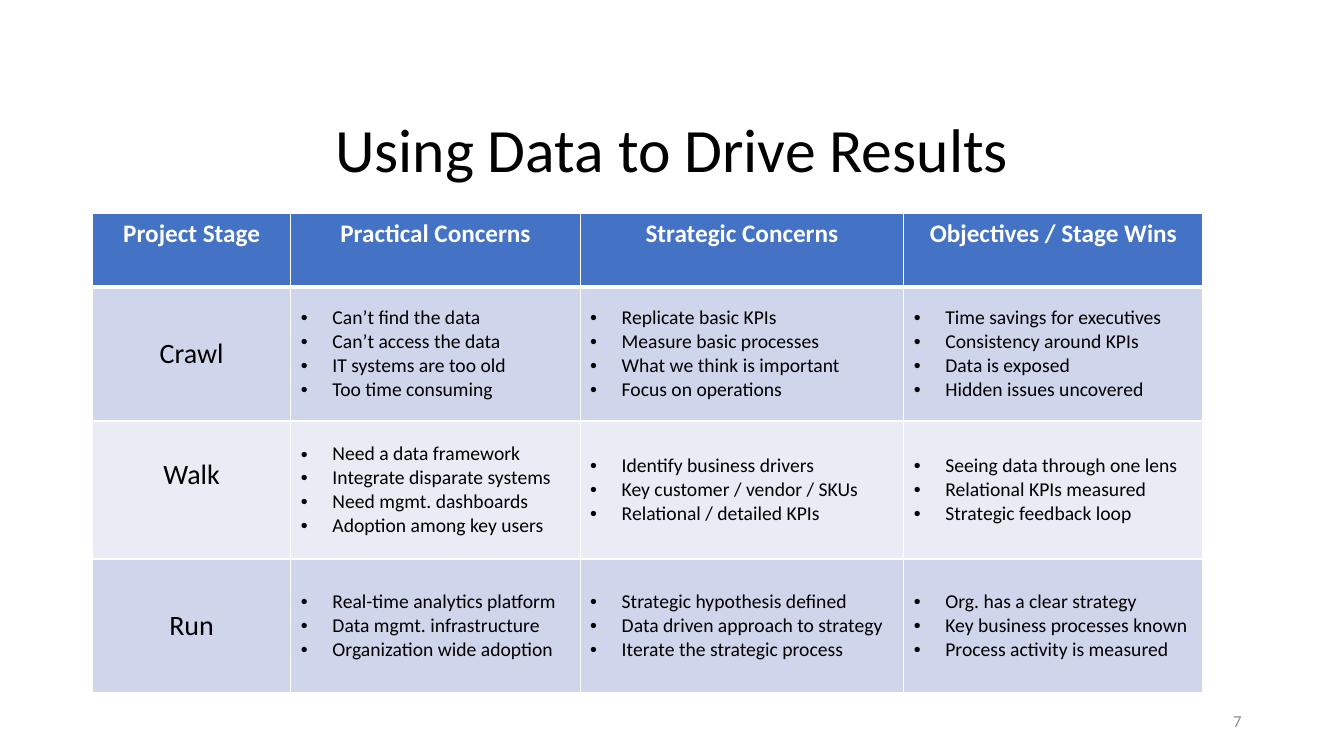
from dataclasses import dataclass

from lxml.etree import SubElement
from pptx import Presentation
from pptx.dml.color import RGBColor as Rgb
from pptx.enum.text import MSO_ANCHOR as Anchor, PP_ALIGN as Align
from pptx.oxml.ns import qn
from pptx.util import Pt


@dataclass(frozen=True)
class Theme:
    """Hold the font, colours and type sizes of the slide."""
    font: str = "Calibri"
    ink: str = "000000"
    white: str = "FFFFFF"
    gray: str = "8C8C8C"
    head: str = "4472C4"
    bands: tuple = ("CFD5EA", "E9EBF5")
    title: int = 44
    stage: int = 20
    label: int = 18
    body: int = 14
    small: int = 12


THEME = Theme()
WIDTHS = (141.8, 206.6, 231.2, 213.8)
HEIGHTS = (52, 96, 98.5, 95.5)
HEADS = ("Project Stage", "Practical Concerns", "Strategic Concerns",
         "Objectives / Stage Wins")
STAGES = (
    ("Crawl",
     ("Can’t find the data", "Can’t access the data",
      "IT systems are too old", "Too time consuming"),
     ("Replicate basic KPIs", "Measure basic processes",
      "What we think is important", "Focus on operations"),
     ("Time savings for executives", "Consistency around KPIs",
      "Data is exposed", "Hidden issues uncovered")),
    ("Walk",
     ("Need a data framework", "Integrate disparate systems",
      "Need mgmt. dashboards", "Adoption among key users"),
     ("Identify business drivers", "Key customer / vendor / SKUs",
      "Relational / detailed KPIs"),
     ("Seeing data through one lens", "Relational KPIs measured",
      "Strategic feedback loop")),
    ("Run",
     ("Real-time analytics platform", "Data mgmt. infrastructure",
      "Organization wide adoption"),
     ("Strategic hypothesis defined", "Data driven approach to strategy",
      "Iterate the strategic process"),
     ("Org. has a clear strategy", "Key business processes known",
      "Process activity is measured")),
)


def style(para, size, color=THEME.ink, align=Align.CENTER, bold=False):
    """Set the font and alignment of a paragraph."""
    para.alignment = align
    font = para.font
    font.name, font.size, font.bold = THEME.font, Pt(size), bold
    font.color.rgb = Rgb.from_string(color)


def bullet(para):
    """Give a paragraph a hanging round bullet."""
    props = para._p.get_or_add_pPr()
    props.set("marL", str(Pt(22.5)))
    props.set("indent", str(-Pt(22.5)))
    SubElement(props, qn("a:buFont"), typeface="Arial")
    SubElement(props, qn("a:buChar"), char="•")


def paint(cell, color, top=1, bottom=1):
    """Draw white borders around a cell and fill it."""
    props = cell._tc.get_or_add_tcPr()
    for side, width in (("L", 1), ("R", 1), ("T", top), ("B", bottom)):
        line = SubElement(props, qn(f"a:ln{side}"), w=str(Pt(width)))
        fill = SubElement(line, qn("a:solidFill"))
        SubElement(fill, qn("a:srgbClr"), val=THEME.white)
    cell.fill.solid()
    cell.fill.fore_color.rgb = Rgb.from_string(color)


def fill_list(cell, items):
    """Write the items as a bulleted list."""
    frame = cell.text_frame
    frame.text = "\n".join(items)
    for para in frame.paragraphs:
        bullet(para)
        style(para, THEME.body, align=Align.LEFT)


def add_title(slide, text):
    """Place and format the title."""
    title = slide.shapes.title
    title.left, title.top, title.width, title.height = map(
        Pt, (66, 65, 828, 88))
    frame = title.text_frame
    frame.text = text
    frame.vertical_anchor = Anchor.MIDDLE
    para = frame.paragraphs[0]
    para.line_spacing = 0.9
    style(para, THEME.title)


def add_grid(slide):
    """Add the table of stages and return it."""
    grid = slide.shapes.add_table(
        len(HEIGHTS), len(WIDTHS), Pt(66), Pt(152.8),
        Pt(sum(WIDTHS)), Pt(sum(HEIGHTS))).table
    for col, width in zip(grid.columns, WIDTHS):
        col.width = Pt(width)
    for row, height in zip(grid.rows, HEIGHTS):
        row.height = Pt(height)
    for col, head in enumerate(HEADS):
        cell = grid.cell(0, col)
        cell.text = head
        style(cell.text_frame.paragraphs[0], THEME.label, THEME.white,
              bold=True)
        paint(cell, THEME.head, bottom=3)
    for row, (stage, *lists) in enumerate(STAGES, 1):
        name = grid.cell(row, 0)
        name.text = stage
        style(name.text_frame.paragraphs[0], THEME.stage)
        for col, items in enumerate(lists, 1):
            fill_list(grid.cell(row, col), items)
        for cell in grid.rows[row].cells:
            cell.vertical_anchor = Anchor.MIDDLE
            paint(cell, THEME.bands[(row - 1) % 2], top=3 if row == 1 else 1)
    return grid


def add_number(slide, text):
    """Add the page number."""
    box = slide.shapes.add_textbox(Pt(678), Pt(500.4), Pt(216), Pt(28.8))
    frame = box.text_frame
    frame.word_wrap = True
    frame.vertical_anchor = Anchor.MIDDLE
    frame.text = text
    style(frame.paragraphs[0], THEME.small, THEME.gray, Align.RIGHT)


def main():
    """Build and save the slide."""
    deck = Presentation()
    deck.slide_width, deck.slide_height = Pt(960), Pt(540)
    slide = deck.slides.add_slide(deck.slide_layouts[5])
    add_title(slide, "Using Data to Drive Results")
    grid = add_grid(slide)
    grid.cell(2, 0).margin_bottom = Pt(25)
    add_number(slide, "7")
    deck.save("out.pptx")


if __name__ == "__main__":
    main()
